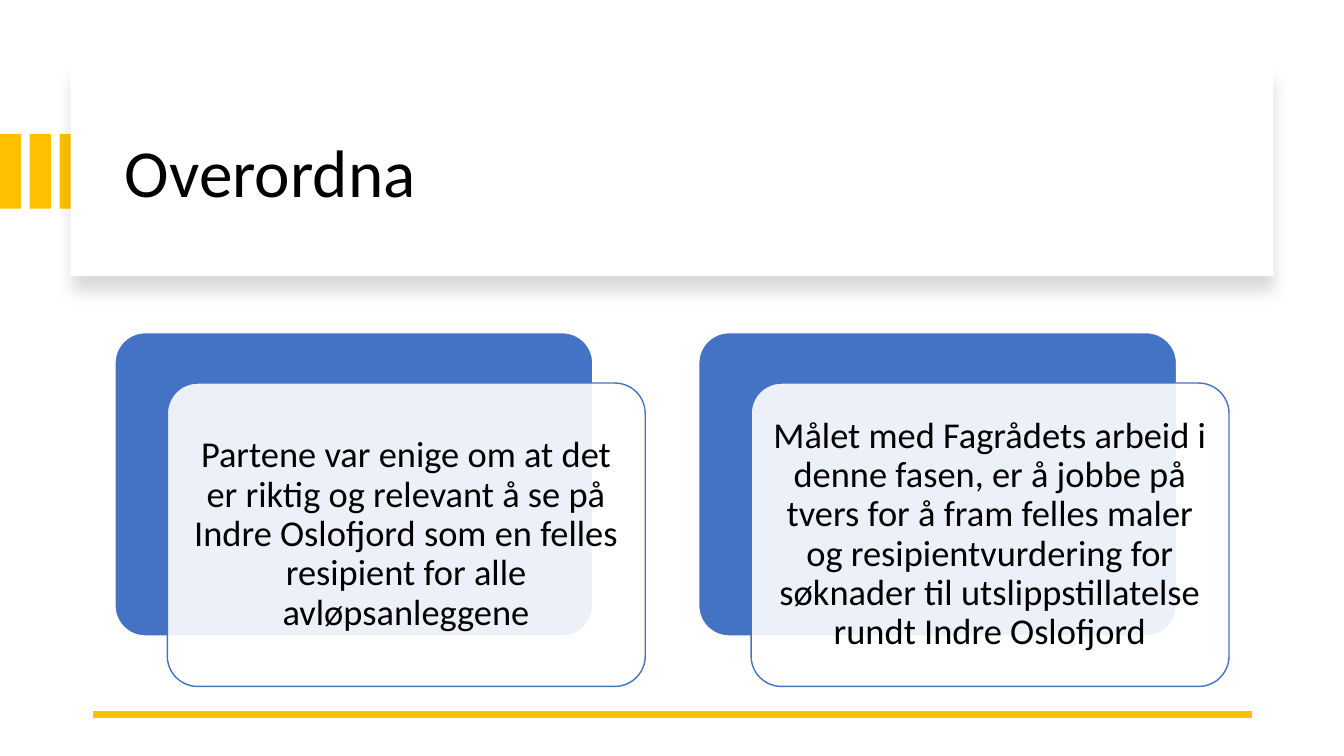
from dataclasses import dataclass
from typing import Any, Optional

import pptx
import pptx.util
import pptx.dml.color
import pptx.enum.shapes
import pptx.enum.text
import pptx.oxml
import pptx.oxml.ns

Inches = pptx.util.Inches
Pt = pptx.util.Pt
RGBColor = pptx.dml.color.RGBColor
Kind = pptx.enum.shapes.MSO_SHAPE
Align = pptx.enum.text.PP_ALIGN
Anchor = pptx.enum.text.MSO_ANCHOR

GOLD = RGBColor(0xFF, 0xC0, 0x00)
BLUE = RGBColor(0x44, 0x72, 0xC4)
WHITE = RGBColor(0xFF, 0xFF, 0xFF)
BLACK = RGBColor(0x00, 0x00, 0x00)
SPACE = pptx.oxml.ns.nsdecls("a")


@dataclass(frozen=True)
class Box:
    left: float
    top: float
    width: float
    height: float

    def shift(self, right: float, down: float) -> "Box":
        return Box(self.left + right, self.top + down, self.width, self.height)

    def sizes(self) -> list[int]:
        return [Inches(n) for n in (self.left, self.top, self.width, self.height)]


@dataclass(frozen=True)
class Card:
    left: float
    text: str


CARDS = (
    Card(1.14, "Partene var enige om at det er riktig og relevant å se på "
               "Indre Oslofjord som en felles resipient for alle avløpsanleggene"),
    Card(6.93, "Målet med Fagrådets arbeid i denne fasen, er å jobbe på tvers "
               "for å fram felles maler og resipientvurdering for søknader til "
               "utslippstillatelse rundt Indre Oslofjord"),
)


def style(target: Any, values: dict[str, Any]) -> None:
    for name, value in values.items():
        setattr(target, name, value)


def add_block(slide: Any, box: Box, fill: RGBColor,
              line: Optional[RGBColor] = None, kind: Any = Kind.RECTANGLE) -> Any:
    block = slide.shapes.add_shape(kind, *box.sizes())
    block.shadow.inherit = False
    block.fill.solid()
    block.fill.fore_color.rgb = fill
    if line is None:
        block.line.fill.background()
    else:
        block.line.color.rgb = line
        block.line.width = Pt(1)
    if kind == Kind.ROUNDED_RECTANGLE:
        block.adjustments[0] = 0.1
    return block


def add_text(shape: Any, text: str, size: float, align: Any, inset: float) -> None:
    frame = shape.text_frame
    style(frame, {
        "word_wrap": True,
        "vertical_anchor": Anchor.MIDDLE,
        "margin_left": Inches(inset),
        "margin_right": Inches(inset),
        "margin_top": Inches(inset),
        "margin_bottom": Inches(inset),
    })
    para = frame.paragraphs[0]
    style(para, {"alignment": align, "line_spacing": 0.9})
    run = para.add_run()
    run.text = text
    style(run.font, {"name": "Calibri", "size": Pt(size)})
    run.font.color.rgb = BLACK


def add_shade(shape: Any) -> None:
    effect = shape._element.spPr.find(pptx.oxml.ns.qn("a:effectLst"))
    effect.append(pptx.oxml.parse_xml(
        f'<a:outerShdw {SPACE} blurRad="{Pt(11)}" dist="{Pt(10)}" dir="5400000" '
        'algn="t" rotWithShape="0"><a:srgbClr val="000000">'
        '<a:alpha val="15000"/></a:srgbClr></a:outerShdw>'))


def add_header(slide: Any) -> None:
    for step in range(3):
        add_block(slide, Box(0.295 * step, 1.33, 0.21, 0.74), GOLD)
    add_shade(add_block(slide, Box(0.7, 0.67, 11.93, 2.07), WHITE))
    title = slide.shapes.add_textbox(*Box(1.14, 0.89, 11.13, 1.7).sizes())
    add_text(title, "Overordna", 48, Align.LEFT, 0.1)


def add_rule(slide: Any) -> None:
    rule = slide.shapes.add_connector(
        pptx.enum.shapes.MSO_CONNECTOR.STRAIGHT,
        Inches(12.42), Inches(7.09), Inches(0.92), Inches(7.09))
    rule.line.color.rgb = GOLD
    rule.line.width = Pt(4.5)
    rule._element.spPr.append(pptx.oxml.parse_xml(f"<a:effectLst {SPACE}/>"))


def add_card(slide: Any, card: Card) -> None:
    back = Box(card.left, 3.3, 4.74, 3.01)
    add_block(slide, back, BLUE, WHITE, Kind.ROUNDED_RECTANGLE)
    front = add_block(slide, back.shift(0.52, 0.5), WHITE, BLUE, Kind.ROUNDED_RECTANGLE)
    tint = front._element.spPr.find(pptx.oxml.ns.qn("a:solidFill"))[0]
    tint.append(pptx.oxml.parse_xml(f'<a:alpha {SPACE} val="90000"/>'))
    add_text(front, card.text, 26, Align.CENTER, 0.11)


def main() -> None:
    deck = pptx.Presentation()
    style(deck, {"slide_width": Inches(13.33), "slide_height": Inches(7.5)})
    slide = deck.slides.add_slide(deck.slide_layouts[6])
    add_header(slide)
    add_rule(slide)
    for card in CARDS:
        add_card(slide, card)
    deck.save("out.pptx")


if __name__ == "__main__":
    main()
